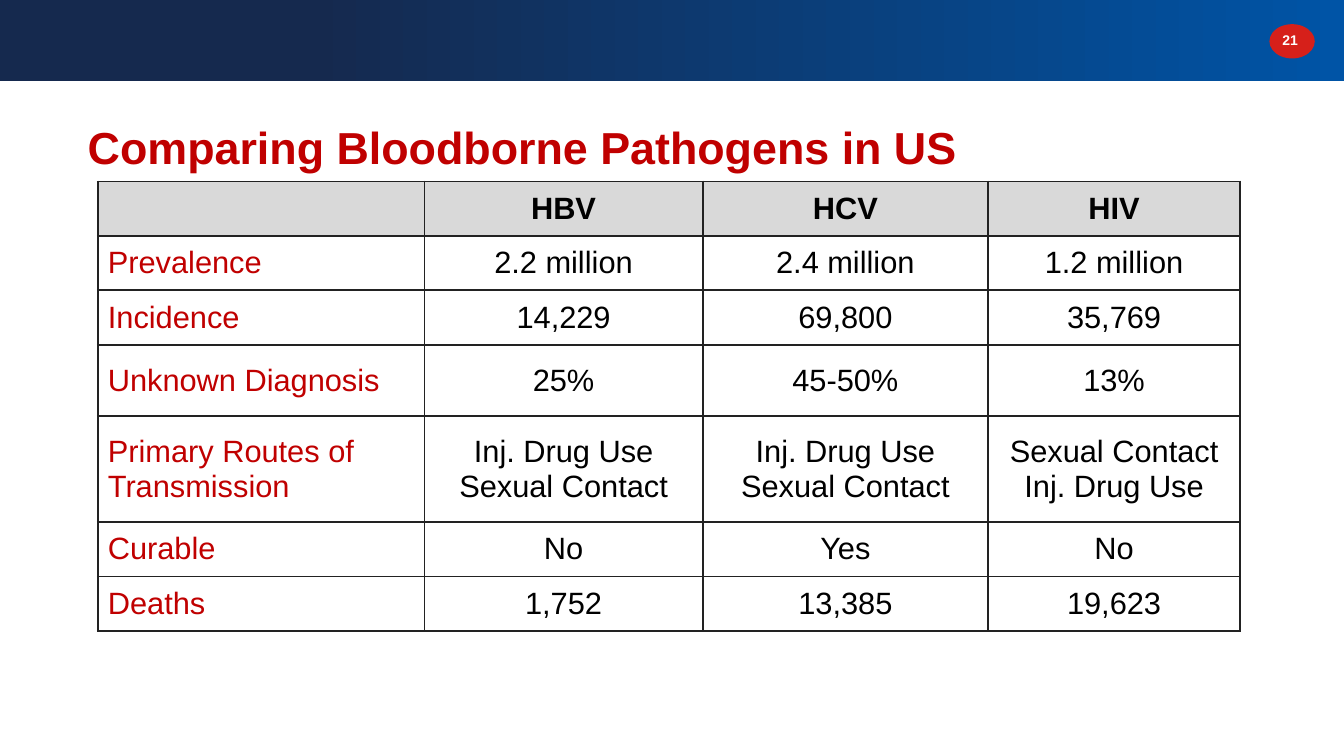
from lxml.etree import SubElement
from pptx import Presentation
from pptx.dml.color import RGBColor
from pptx.enum.shapes import MSO_SHAPE
from pptx.enum.text import MSO_ANCHOR, PP_ALIGN
from pptx.oxml.ns import qn
from pptx.util import Pt

PX = 9144  # 100 px to the inch
RED, BLACK, WHITE, GREY, BORDER = "C00000", "000000", "FFFFFF", "D9D9D9", "222222"


def rgb(value):
    return RGBColor.from_string(value)


def format_text(frame, size, color, bold, align):
    frame.vertical_anchor = MSO_ANCHOR.MIDDLE
    for paragraph in frame.paragraphs:
        paragraph.alignment = align
        for run in paragraph.runs:
            run.font.name = "Arial"
            run.font.size = Pt(size)
            run.font.bold = bold
            run.font.color.rgb = rgb(color)


presentation = Presentation()
presentation.slide_width, presentation.slide_height = 1333 * PX, 750 * PX
slide = presentation.slides.add_slide(presentation.slide_layouts[5])
shapes = slide.shapes

# Header band
band = shapes.add_shape(MSO_SHAPE.RECTANGLE, 0, 0, 1333 * PX, 80 * PX)
band.shadow.inherit = False
band.line.fill.background()
band.fill.gradient()
band.fill.gradient_angle = 0
for stop, position, color in zip(band.fill.gradient_stops, (0.23, 1), ("15294E", "0054A6")):
    stop.position = position
    stop.color.rgb = rgb(color)

# Page number
badge = shapes.add_shape(MSO_SHAPE.OVAL, 1259 * PX, 24 * PX, 45 * PX, 34 * PX)
badge.shadow.inherit = False
badge.line.fill.background()
badge.fill.solid()
badge.fill.fore_color.rgb = rgb("D6201A")
page_number = shapes.add_textbox(1252 * PX, 26 * PX, 55 * PX, 27 * PX).text_frame
page_number.word_wrap = True
page_number.text = "21"
format_text(page_number, 10, WHITE, True, PP_ALIGN.CENTER)

# Title
title = shapes.title
title.left, title.top, title.width, title.height = 77 * PX, 110 * PX, 1004 * PX, 71 * PX
title.text_frame.text = "Comparing Bloodborne Pathogens in US"
format_text(title.text_frame, 32, RED, True, PP_ALIGN.LEFT)

# Pathogen table
comparison = [
    ("", "HBV", "HCV", "HIV"),
    ("Prevalence", "2.2 million", "2.4 million", "1.2 million"),
    ("Incidence", "14,229", "69,800", "35,769"),
    ("Unknown Diagnosis", "25%", "45-50%", "13%"),
    ("Primary Routes of Transmission", "Inj. Drug Use\nSexual Contact",
     "Inj. Drug Use\nSexual Contact", "Sexual Contact\nInj. Drug Use"),
    ("Curable", "No", "Yes", "No"),
    ("Deaths", "1,752", "13,385", "19,623"),
]
column_widths = (324, 276, 283, 250)
row_heights = (54, 54, 54, 71, 105, 54, 54)
pathogens = shapes.add_table(len(row_heights), len(column_widths), 97 * PX, 180 * PX,
                             sum(column_widths) * PX, sum(row_heights) * PX).table
pathogens.horz_banding = False
for column, width in zip(pathogens.columns, column_widths):
    column.width = width * PX
for row, height in zip(pathogens.rows, row_heights):
    row.height = height * PX

for r, measures in enumerate(comparison):
    for c, measure in enumerate(measures):
        cell = pathogens.cell(r, c)
        cell.text_frame.text = measure
        format_text(cell.text_frame, 22, BLACK if c else RED, r == 0,
                    PP_ALIGN.CENTER if c else PP_ALIGN.LEFT)
        cell.vertical_anchor = MSO_ANCHOR.MIDDLE

        # Borders come before the fill in the cell properties
        properties = cell._tc.get_or_add_tcPr()
        for side in ("a:lnL", "a:lnR", "a:lnT", "a:lnB"):
            border = SubElement(properties, qn(side), w=str(Pt(1.5)))
            border_fill = SubElement(border, qn("a:solidFill"))
            SubElement(border_fill, qn("a:srgbClr"), val=BORDER)
        cell.fill.solid()
        cell.fill.fore_color.rgb = rgb(WHITE if r else GREY)

presentation.save("out.pptx")
